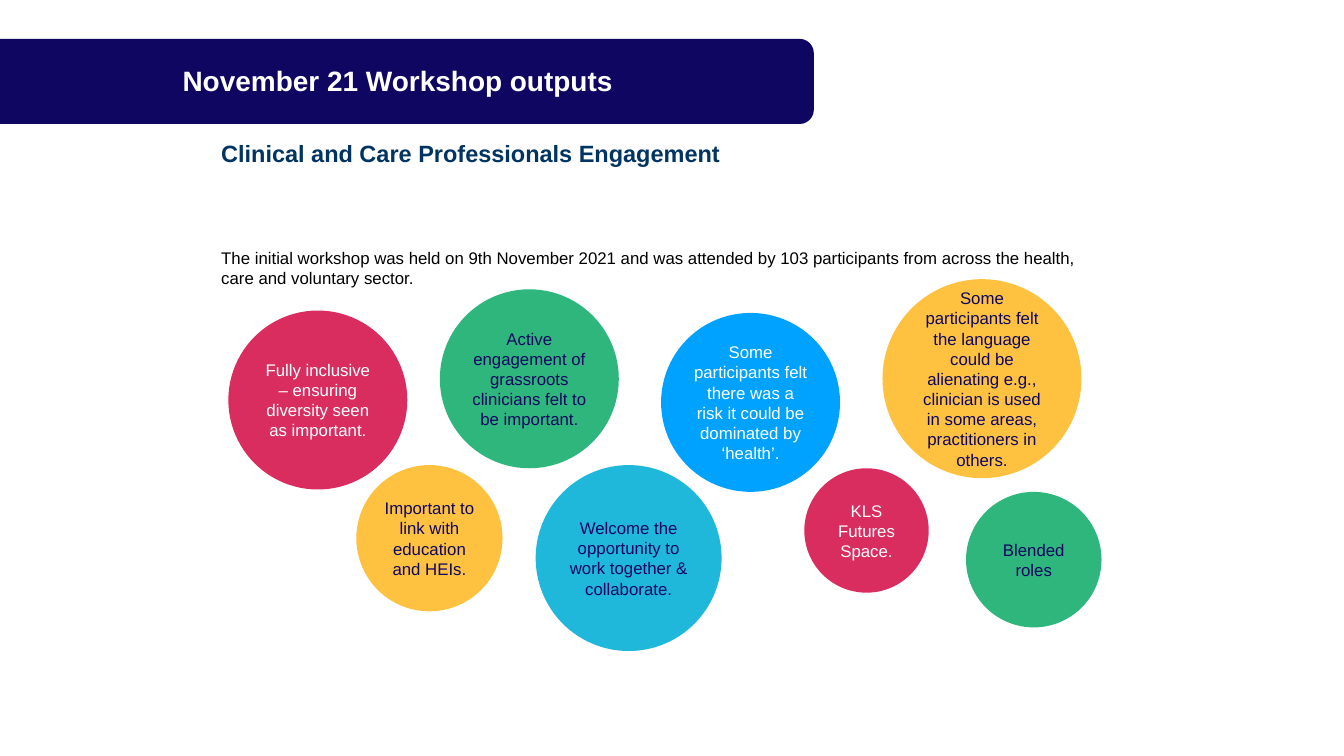
from pptx import Presentation, util as u
from pptx.dml.color import RGBColor
from pptx.enum import shapes, text

NAVY, WHITE, BLACK, TITLE_BLUE = "0E0661", "FFFFFF", "000000", "003462"
PINK, YELLOW, GREEN, BLUE, TEAL = "D92D5F", "FFC240", "2EB67D", "00A2FF", "1FB8DB"

# left, top, diameter (cm), fill, text colour, wording
BUBBLES = [
    (11.51, 15.65, 9.02, PINK, WHITE,
     "Fully inclusive – ensuring diversity seen as important."),
    (17.96, 23.44, 7.37, YELLOW, NAVY,
     "Important to link with education and HEIs."),
    (22.17, 14.58, 9.02, GREEN, NAVY,
     "Active engagement of grassroots clinicians felt to be important."),
    (33.32, 15.77, 9.02, BLUE, WHITE,
     "Some participants felt there was a risk it could be dominated by ‘health’."),
    (44.48, 14.07, 10.03, YELLOW, NAVY,
     "Some participants felt the language could be alienating e.g., clinician "
     "is used in some areas, practitioners in others."),
    (27, 23.44, 9.37, TEAL, NAVY,
     "Welcome the opportunity to work together & collaborate."),
    (40.54, 23.6, 6.27, PINK, WHITE, "KLS Futures Space."),
    (48.69, 24.79, 6.83, GREEN, NAVY, "Blended roles"),
]


def rgb(value):
    return RGBColor.from_string(value)


def set_all(obj, values):
    for name, value in values.items():
        setattr(obj, name, value)


def write(sp, words, color, size=24, bold=False, anchor=text.MSO_ANCHOR.MIDDLE,
          align=text.PP_ALIGN.LEFT, spacing=1.0, insets=(0.25, 0.13)):
    """Fill a shape with one paragraph; insets are (sides, top and bottom) in cm."""
    side, edge = (u.Cm(i) for i in insets)
    tf = sp.text_frame
    set_all(tf, {"word_wrap": True, "vertical_anchor": anchor,
                 "margin_left": side, "margin_right": side,
                 "margin_top": edge, "margin_bottom": edge})
    p = tf.paragraphs[0]
    set_all(p, {"alignment": align, "line_spacing": spacing})
    r = p.add_run()
    r.text = words
    set_all(r.font, {"name": "Arial", "size": u.Pt(size), "bold": bold})
    r.font.color.rgb = rgb(color)


def add_filled(slide, kind, box, fill):
    sp = slide.shapes.add_shape(kind, *(u.Cm(v) for v in box))
    sp.shadow.inherit = False
    sp.fill.solid()
    sp.fill.fore_color.rgb = rgb(fill)
    sp.line.fill.background()
    return sp


def add_text(slide, box, words, color, **style):
    write(slide.shapes.add_textbox(*(u.Cm(v) for v in box)), words, color, **style)


def add_bubble(slide, left, top, diameter, fill, color, words):
    sp = add_filled(slide, shapes.MSO_SHAPE.OVAL, (left, top, diameter, diameter), fill)
    write(sp, words, color, align=text.PP_ALIGN.CENTER)


def main():
    prs = Presentation()
    set_all(prs, {"slide_width": u.Cm(67.74), "slide_height": u.Cm(38.1)})
    slide = prs.slides.add_slide(prs.slide_layouts[6])

    add_filled(slide, shapes.MSO_SHAPE.ROUNDED_RECTANGLE, (-1.5, 1.96, 42.52, 4.29), NAVY)
    add_text(slide, (11, 6.81, 27.99, 2.16), "Clinical and Care Professionals Engagement",
             TITLE_BLUE, size=33.6, bold=True, spacing=0.7, insets=(0.15, 0.15))
    add_text(slide, (11, 12.32, 44.15, 2.59),
             "The initial workshop was held on 9th November 2021 and was attended by "
             "103 participants from across the health, care and voluntary sector.",
             BLACK, anchor=text.MSO_ANCHOR.TOP, insets=(0.15, 0.15))
    for bubble in BUBBLES:
        add_bubble(slide, *bubble)
    add_text(slide, (8.69, 2.72, 37.31, 2.87), "November 21 Workshop outputs",
             WHITE, size=40, bold=True, spacing=0.9, insets=(0.51, 0.25))

    prs.save("out.pptx")


if __name__ == "__main__":
    main()
